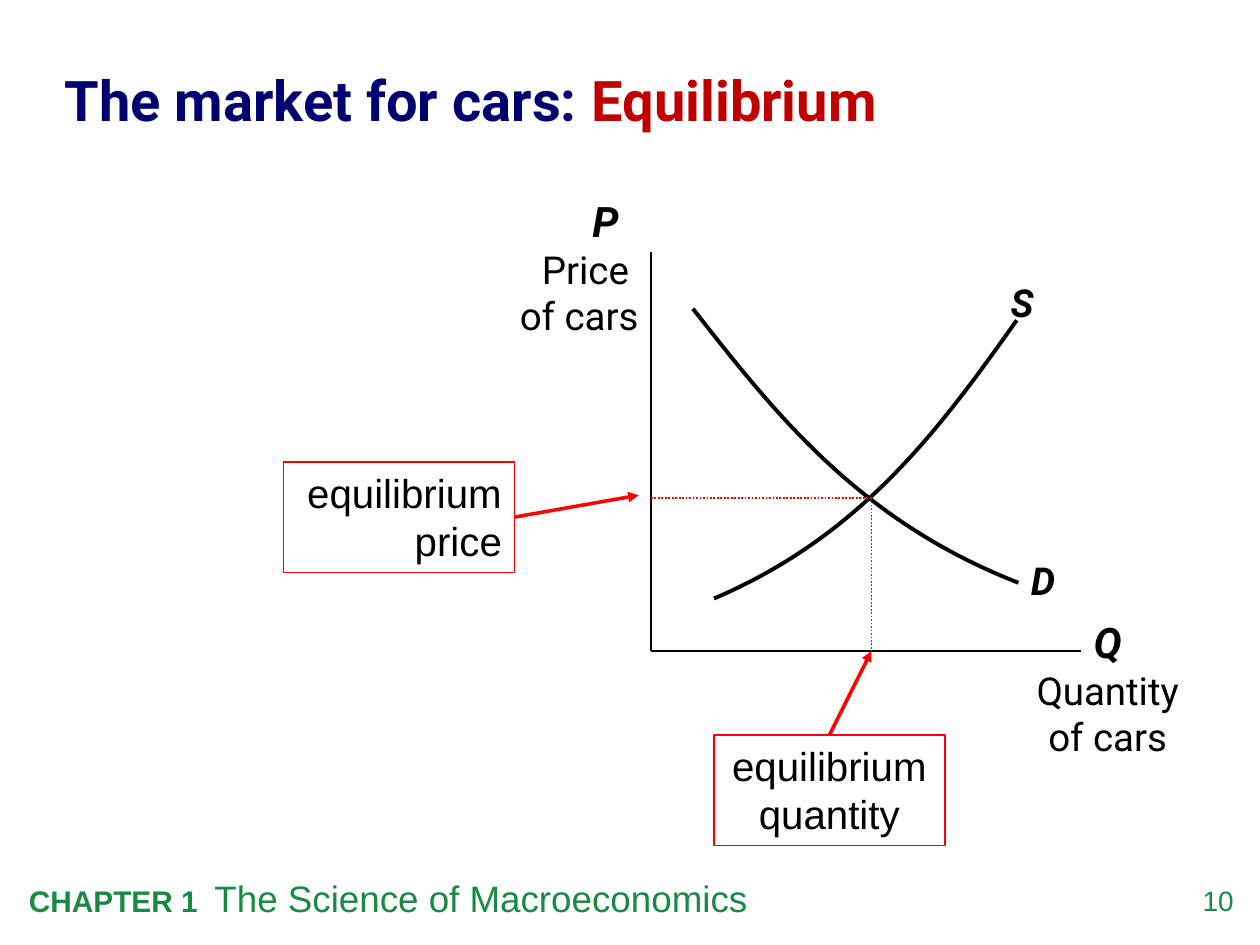
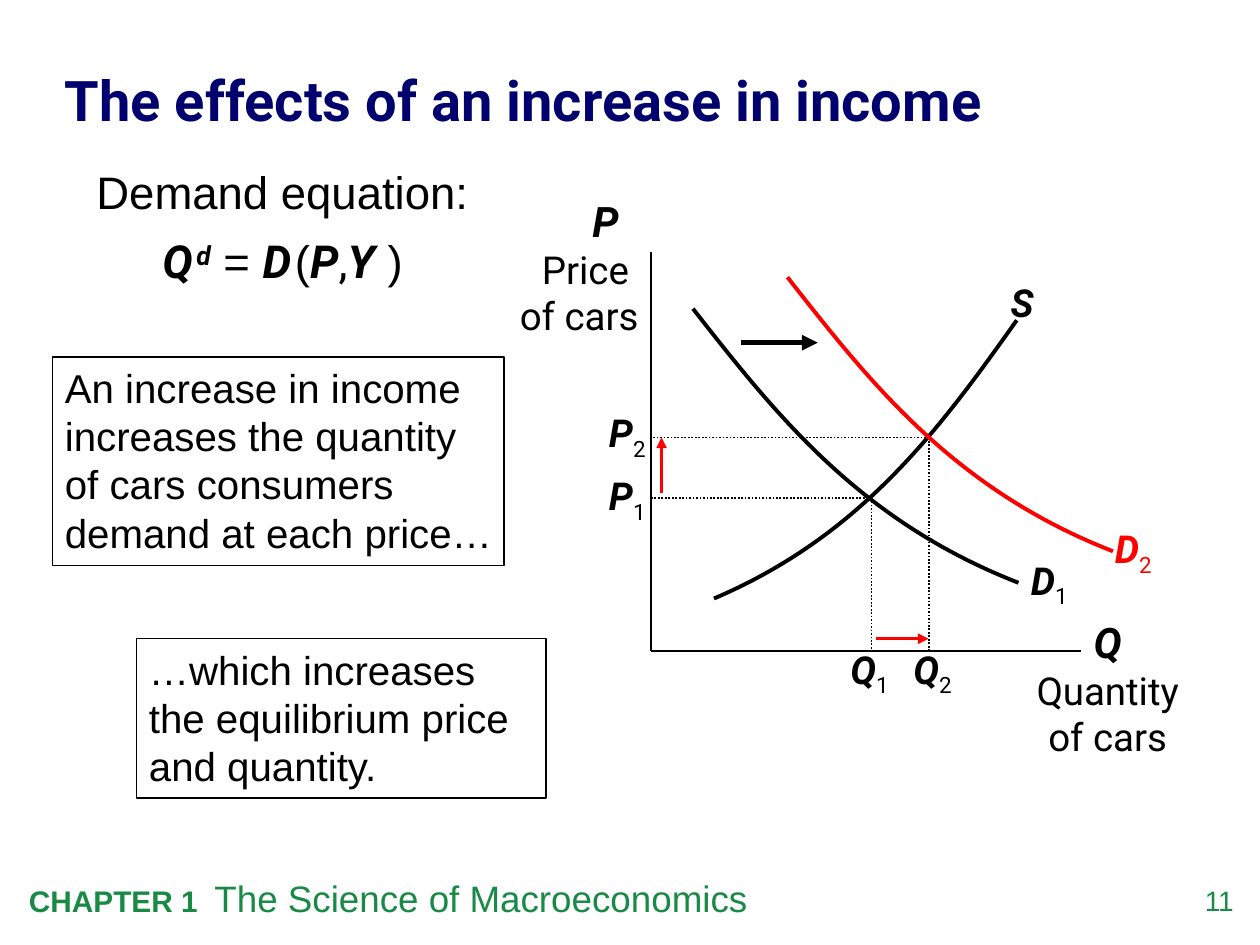
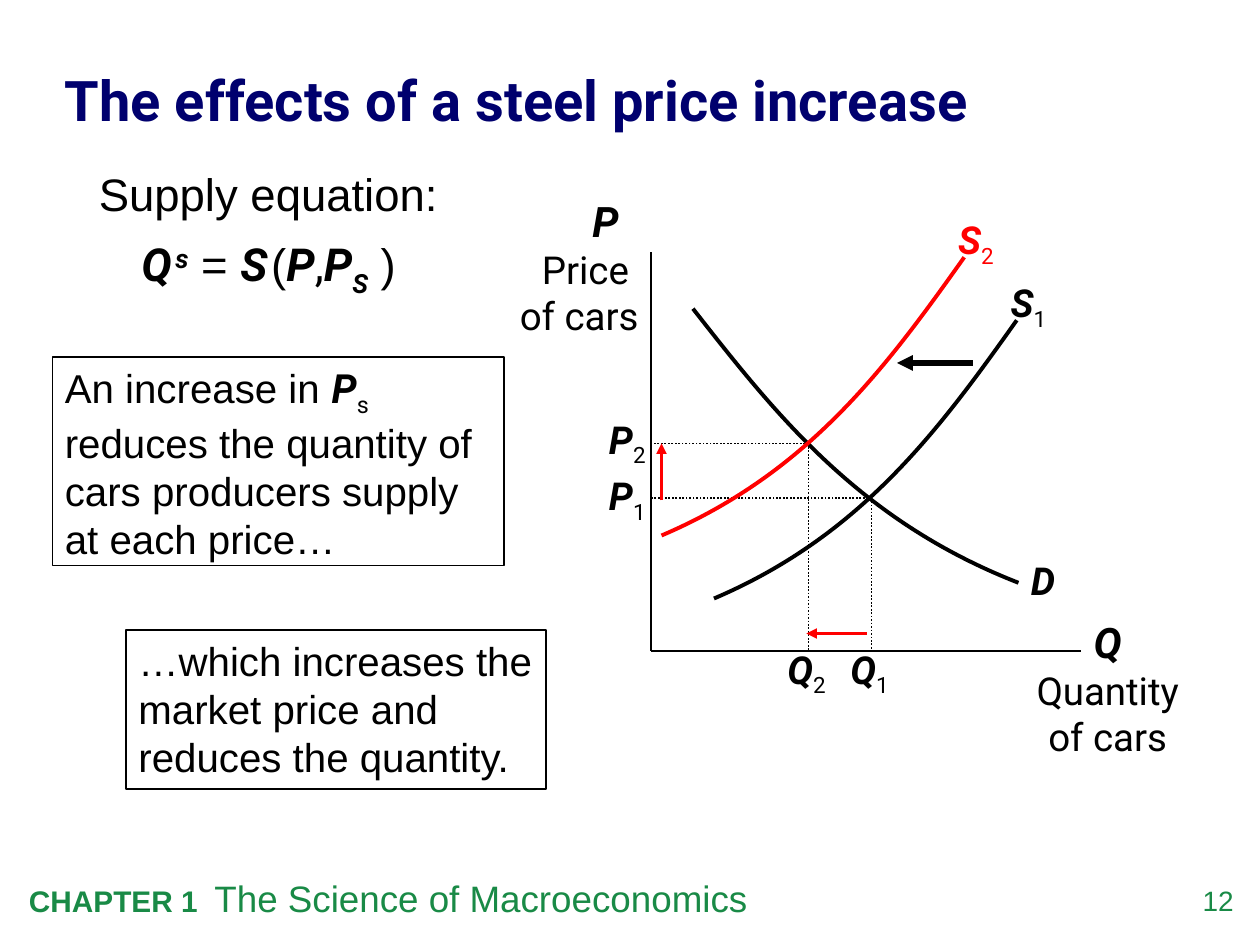
from dataclasses import dataclass

from lxml import etree
from pptx import Presentation
from pptx import util as u
from pptx.dml import color
from pptx.enum import dml, shapes, text
from pptx.oxml.ns import qn


@dataclass(frozen=True)
class Theme:
    black: str = "000000"
    white: str = "FFFFFF"
    red: str = "FF0000"
    crimson: str = "C00000"
    navy: str = "00006E"
    green: str = "198A46"
    body: str = "Arial"
    display: str = "Roboto"
    title: int = 32
    equation: int = 26
    axis: int = 24
    note: int = 23
    label: int = 22
    footer: int = 21
    chapter: int = 17
    number: int = 16
    gap: int = 8


T = Theme()
VARIABLE = dict(font=T.display, bold=True, italic=True)
ROMAN = dict(font=T.display, bold=False, italic=False)
PLAIN = dict(font=T.body, bold=False, italic=False)
SUB = dict(ROMAN, base=-25)
SUP = dict(VARIABLE, base=30)
GAP = dict(VARIABLE, size=T.gap)

LEFT, CENTER, RIGHT = text.PP_ALIGN.LEFT, text.PP_ALIGN.CENTER, text.PP_ALIGN.RIGHT
INSETS = (7.2, 3.6, 7.2, 3.6)
LABEL_INSETS = (7.2, 3.6, 0, 3.6)
NO_INSETS = (0, 0, 0, 0)

ORIGIN, PRICE_TOP, QUANTITY_END = (372, 372), 144, 618
SUPPLY = [(581, 183), (537, 245), (492.5, 306), (408, 342)]
DEMAND = [(396, 176.4), (443.5, 237), (491, 297.5), (582, 333)]
SUPPLY_LABEL, DEMAND_LABEL = (570.5, 156), (582, 314.6)
EQUILIBRIUM = (498, 284.4)
FIRST_TICKS = ("1", 270, 486)
FOOTER = [("CHAPTER 1  ", dict(bold=True, size=T.chapter)), ("The Science of Macroeconomics", {})]
FIRST_NUMBER = 10


def equation(function, superscript, *arguments):
    return [("Q", VARIABLE), (" ", GAP), (superscript, SUP), (" = ", PLAIN), (function, VARIABLE),
            (" ", GAP), ("(", PLAIN), ("P", VARIABLE), (",", ROMAN), *arguments, (" )", PLAIN)]


MARKET = dict(
    title=[("The market for cars: ", {}), ("Equilibrium", dict(color=T.crimson))],
    guide_color=T.red,
    supply="", demand="",
    callouts=[
        ((162, 264, 132, 63), "equilibrium price", RIGHT, 3, (365, 283)),
        ((408, 420, 132, 63), "equilibrium\nquantity", CENTER, 0, (498, 372)),
    ],
)
INCOME = dict(
    title=[("The effects of an increase in income", {})],
    guide_color=T.black,
    supply="", demand="1",
    heading="Demand equation:",
    equation=equation("D", "d", ("Y", VARIABLE)),
    equation_at=(41, 88.6, 241, 81),
    notes=[
        ((30, 204, 258, 119), 3.6,
         [("An increase in income increases the quantity \nof cars consumers demand at each price…", {})]),
        ((78, 365, 234, 91), 7.2, [("…which increases the equilibrium price and quantity.", {})]),
    ],
    moved=dict(curve=DEMAND, by=(54, -18), name="D", label=(630, 296.6), equilibrium=(531, 250),
               ticks=("2", 234, 522)),
    arrows=[((378, 282), (378, 250), T.red, 2), ((500.4, 365), (530.6, 365), T.red, 2),
            ((423.4, 195.8), (467.3, 195.8), T.black, 3)],
)
STEEL = dict(
    title=[("The effects of a steel price increase", {})],
    guide_color=T.black,
    supply="1", demand="",
    heading="Supply equation:",
    equation=equation("S", "s", ("P", VARIABLE), ("S", dict(VARIABLE, base=-25))),
    equation_at=(33, 90, 241, 81),
    notes=[
        ((30, 204, 258, 119), 7.2,
         [("An increase in ", {}), ("P", VARIABLE), ("s", SUB),
          (" reduces the quantity of cars producers supply at each price…", {})]),
        ((72, 360, 240, 91), 7.2, [("…which increases the market price and reduces the quantity.", {})]),
    ],
    moved=dict(curve=SUPPLY, by=(-30, -36), name="S", label=(540.5, 120), equilibrium=(462, 253.4),
               ticks=("2", 237.6, 450)),
    arrows=[((378, 286), (378, 253.4), T.red, 2), ((495.4, 362), (460.8, 362), T.red, 2),
            ((556, 207.4), (512.6, 207.4), T.black, 3)],
)
SLIDES = [MARKET, INCOME, STEEL]


def rgb(value):
    return color.RGBColor.from_string(value)


def points(values):
    return [u.Pt(value) for value in values]


def fill_paragraph(paragraph, runs, size, ink, font=T.body, bold=False, align=LEFT, spacing=None):
    paragraph.alignment = align
    paragraph.line_spacing = spacing
    base = paragraph.font
    base.size, base.name, base.bold = u.Pt(size), font, bold
    base.color.rgb = rgb(ink)
    for content, style in runs:
        for index, line in enumerate(content.split("\n")):
            if index:
                paragraph.add_line_break()
            run = paragraph.add_run()
            run.text = line
            run.font.size = u.Pt(style.get("size", size))
            run.font.name = style.get("font", font)
            run.font.bold = style.get("bold", bold)
            run.font.italic = style.get("italic", False)
            run.font.color.rgb = rgb(style.get("color", ink))
            if "base" in style:
                run.font._element.set("baseline", str(style["base"] * 1000))


def prepare_frame(frame, insets, anchor=text.MSO_ANCHOR.TOP):
    frame.word_wrap = True
    frame.auto_size = text.MSO_AUTO_SIZE.NONE
    frame.vertical_anchor = anchor
    frame.margin_left, frame.margin_top, frame.margin_right, frame.margin_bottom = points(insets)


def add_text(slide, at, runs, size, ink=T.black, insets=INSETS, **style):
    frame = slide.shapes.add_textbox(*points(at)).text_frame
    prepare_frame(frame, insets)
    fill_paragraph(frame.paragraphs[0], runs, size, ink, **style)
    return frame


def add_box(slide, at, runs, border, align=LEFT, right_inset=7.2):
    box = slide.shapes.add_shape(shapes.MSO_SHAPE.RECTANGLE, *points(at))
    box.shadow.inherit = False
    box.fill.solid()
    box.fill.fore_color.rgb = rgb(T.white)
    box.line.color.rgb = rgb(border)
    box.line.width = u.Pt(0.75)
    prepare_frame(box.text_frame, (7.2, 3.6, right_inset, 3.6))
    fill_paragraph(box.text_frame.paragraphs[0], runs, T.note, T.black, align=align)
    return box


def add_line(slide, start, end, ink, width, dotted=False, arrow=False):
    line = slide.shapes.add_connector(shapes.MSO_CONNECTOR.STRAIGHT, *points(start + end))
    line.line.color.rgb = rgb(ink)
    line.line.width = u.Pt(width)
    if dotted:
        line.line.dash_style = dml.MSO_LINE.ROUND_DOT
    properties = line._element.spPr
    if arrow:
        etree.SubElement(properties.find(qn("a:ln")), qn("a:tailEnd"), type="triangle")
    etree.SubElement(properties, qn("a:effectLst"))
    return line


def add_curve(slide, controls, ink, by=(0, 0)):
    start, *rest = [points((x + by[0], y + by[1])) for x, y in controls]
    builder = slide.shapes.build_freeform(*start)
    builder.add_line_segments(rest, close=False)
    curve = builder.convert_to_shape()
    segments = list(curve._element.iter(qn("a:lnTo")))
    outline = segments[0].getparent()
    bezier = etree.SubElement(outline, qn("a:cubicBezTo"))
    for segment in segments:
        bezier.append(segment[0])
        outline.remove(segment)
    curve.shadow.inherit = False
    curve.fill.background()
    curve.line.color.rgb = rgb(ink)
    curve.line.width = u.Pt(2.25)


def add_symbol(slide, at, size, name, subscript, ink=T.black, insets=NO_INSETS):
    runs = [(name, VARIABLE)] + ([(subscript, SUB)] if subscript else [])
    add_text(slide, at + size, runs, T.label, ink, insets, font=T.display)


def add_curve_label(slide, at, name, subscript, ink=T.black):
    add_symbol(slide, at, (42, 34), name, subscript, ink, LABEL_INSETS)


def add_guides(slide, equilibrium, ink):
    x, y = equilibrium
    add_line(slide, equilibrium, (ORIGIN[0], y), ink, 1, dotted=True)
    add_line(slide, equilibrium, (x, ORIGIN[1]), ink, 1, dotted=True)


def add_ticks(slide, subscript, price_top, quantity_left):
    add_symbol(slide, (348, price_top), (30, 27), "P", subscript)
    add_symbol(slide, (quantity_left, 369), (30, 27), "Q", subscript)


def add_market(slide, content):
    add_line(slide, (ORIGIN[0], PRICE_TOP), ORIGIN, T.black, 0.75)
    add_line(slide, ORIGIN, (QUANTITY_END, ORIGIN[1]), T.black, 0.75)
    axis = dict(VARIABLE, size=T.axis)
    add_text(slide, (582, 349, 102, 89), [("Q", axis), (" Quantity of cars", ROMAN)], T.label,
             font=T.display, align=CENTER)
    add_text(slide, (282, 108, 90, 89), [("P ", axis), (" \nPrice \nof cars", ROMAN)], T.label,
             font=T.display, align=RIGHT)
    add_curve(slide, SUPPLY, T.black)
    add_curve_label(slide, SUPPLY_LABEL, "S", content["supply"])
    add_curve(slide, DEMAND, T.black)
    add_curve_label(slide, DEMAND_LABEL, "D", content["demand"])
    add_guides(slide, EQUILIBRIUM, content["guide_color"])


def add_change(slide, content):
    moved = content["moved"]
    add_ticks(slide, *FIRST_TICKS)
    for at, right_inset, runs in content["notes"]:
        add_box(slide, at, runs, T.black, right_inset=right_inset)
    add_ticks(slide, *moved["ticks"])
    add_guides(slide, moved["equilibrium"], T.black)
    add_curve(slide, moved["curve"], T.red, moved["by"])
    add_curve_label(slide, moved["label"], moved["name"], "2", T.red)
    for start, end, ink, width in content["arrows"]:
        add_line(slide, start, end, ink, width, arrow=True)
    frame = add_text(slide, content["equation_at"], [(content["heading"], {})], T.equation,
                     align=CENTER, spacing=1.05)
    formula = frame.add_paragraph()
    fill_paragraph(formula, content["equation"], T.equation, T.black, align=CENTER, spacing=1.05)
    formula.space_before = u.Pt(7)


def add_callouts(slide, callouts):
    for at, words, align, side, target in callouts:
        box = add_box(slide, at, [(words, {})], T.red, align)
        arrow = add_line(slide, at[:2], target, T.red, 2, arrow=True)
        arrow.begin_connect(box, side)


def add_frame(slide, title_runs, number):
    title = slide.shapes.title
    title.left, title.top, title.width, title.height = points((37, 18.7, 649, 74))
    prepare_frame(title.text_frame, NO_INSETS, text.MSO_ANCHOR.MIDDLE)
    fill_paragraph(title.text_frame.paragraphs[0], title_runs, T.title, T.navy, T.display,
                   bold=True, spacing=1.05)
    add_text(slide, (665, 505, 40, 23), [(str(number), {})], T.number, T.green, NO_INSETS, align=RIGHT)
    add_text(slide, (9.4, 497, 589, 32), FOOTER, T.footer, T.green)


def main():
    deck = Presentation()
    deck.slide_width, deck.slide_height = points((720, 540))
    for number, content in enumerate(SLIDES, FIRST_NUMBER):
        slide = deck.slides.add_slide(deck.slide_layouts.get_by_name("Title Only"))
        add_frame(slide, content["title"], number)
        add_market(slide, content)
        if "moved" in content:
            add_change(slide, content)
        add_callouts(slide, content.get("callouts", []))
    deck.save("out.pptx")


if __name__ == "__main__":
    main()
